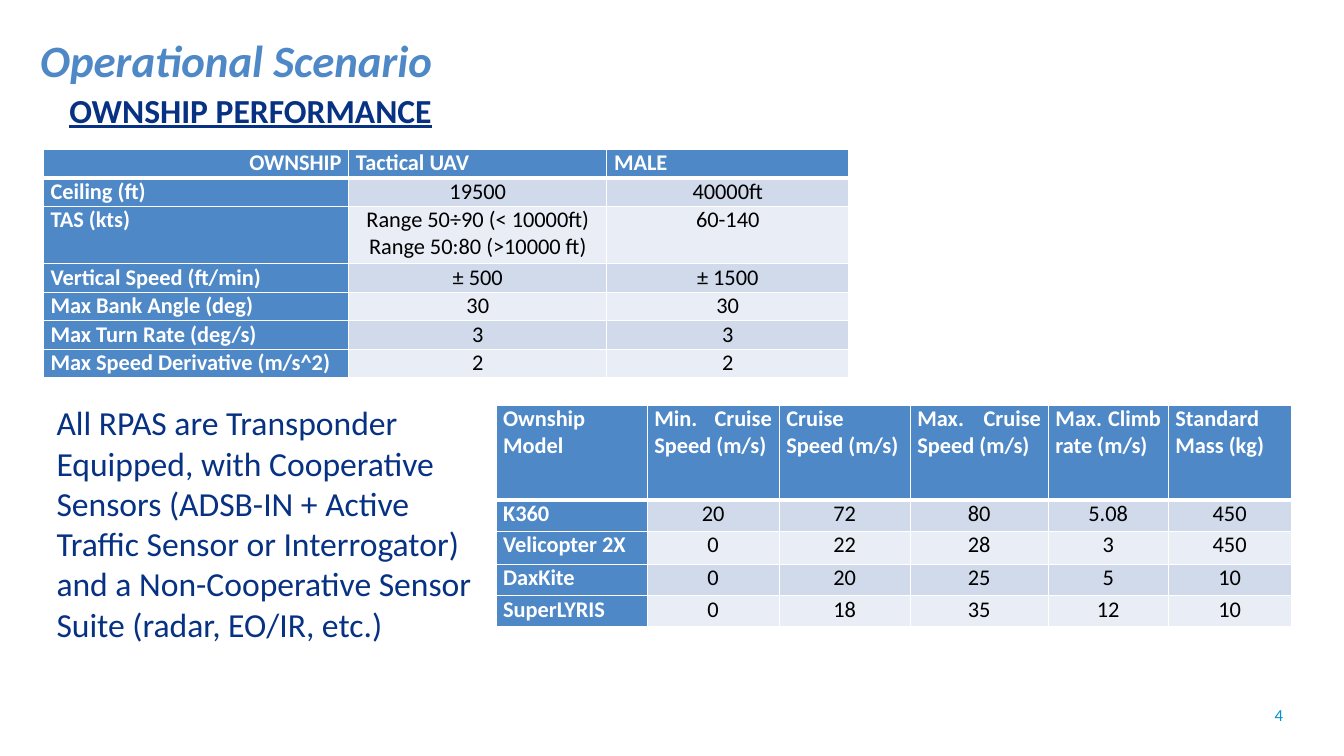
from dataclasses import dataclass, field

from lxml.etree import SubElement
from pptx import Presentation
from pptx.dml.color import RGBColor
from pptx.enum.text import MSO_AUTO_SIZE as AutoSize, PP_ALIGN as Align
from pptx.oxml.ns import qn
from pptx.util import Emu, Pt

# Grid of 160 columns by 90 rows of square units, twelve to the inch
COLUMNS, ROWS, UNIT = 160, 90, 76200
FONT = "Calibri"
WHITE, BLACK, NAVY, CYAN = "FFFFFF", "000000", "073182", "0093D1"
BLUE, BAND_DARK, BAND_LIGHT = "4E88C7", "D0DAEB", "E9EDF5"


@dataclass
class Caption:
    text: str
    box: tuple[float, float, float, float]
    color: str
    style: dict = field(default_factory=dict)
    align: Align = Align.LEFT
    padded: bool = True
    wrap: bool = True
    indent: float = 0


@dataclass
class Grid:
    left: float
    top: float
    widths: list[float]
    heights: list[float]
    rows: list[list[str]]
    corner_align: Align = Align.JUSTIFY


def units(amount: float) -> Emu:
    return Emu(round(amount * UNIT))


def rgb(color: str) -> RGBColor:
    return RGBColor.from_string(color)


def set_font(paragraph, color: str, style: dict) -> None:
    for run in paragraph.runs:
        for name, value in {"name": FONT, **style}.items():
            setattr(run.font, name, value)
        run.font.color.rgb = rgb(color)


def draw_caption(slide, caption: Caption) -> None:
    frame = slide.shapes.add_textbox(*map(units, caption.box)).text_frame
    frame.word_wrap = caption.wrap
    if not caption.wrap:
        frame.auto_size = AutoSize.SHAPE_TO_FIT_TEXT
    if not caption.padded:
        for side in ("left", "top", "right", "bottom"):
            setattr(frame, f"margin_{side}", 0)
    frame.text = caption.text
    paragraph = frame.paragraphs[0]
    paragraph.alignment = caption.align
    if caption.indent:
        properties = paragraph._p.get_or_add_pPr()
        properties.set("marL", str(units(caption.indent)))
        properties.set("indent", "0")
    set_font(paragraph, caption.color, caption.style)


def draw_borders(cell, row: int) -> None:
    """White hairlines, with a heavier rule under the header row."""
    widths = {"L": 1, "R": 1, "T": 3 if row == 1 else 1, "B": 3 if row == 0 else 1}
    properties = cell._tc.get_or_add_tcPr()
    for side, width in widths.items():
        line = SubElement(properties, qn(f"a:ln{side}"), w=str(Pt(width)))
        SubElement(SubElement(line, qn("a:solidFill")), qn("a:srgbClr"), val=WHITE)


def draw_cell(cell, text: str, row: int, column: int, corner_align: Align) -> None:
    heading = row == 0 or column == 0
    align = Align.JUSTIFY if heading else Align.CENTER
    if row == column == 0:
        align = corner_align
    margins = {"margin_left": units(0.86), "margin_right": units(0.86),
               "margin_top": 0, "margin_bottom": 0}
    for name, value in margins.items():
        setattr(cell, name, value)
    draw_borders(cell, row)
    cell.fill.solid()
    cell.fill.fore_color.rgb = rgb(BLUE if heading else BAND_DARK if row % 2 else BAND_LIGHT)
    cell.text = text
    for paragraph in cell.text_frame.paragraphs:
        paragraph.alignment = align
        set_font(paragraph, WHITE if heading else BLACK, {"size": Pt(16), "bold": heading})
    cell.text_frame.paragraphs[-1].space_after = Pt(10)


def draw_grid(slide, grid: Grid) -> None:
    box = (grid.left, grid.top, sum(grid.widths), sum(grid.heights))
    table = slide.shapes.add_table(
        len(grid.rows), len(grid.widths), *map(units, box)).table
    table.horz_banding = False
    for column, width in zip(table.columns, grid.widths):
        column.width = units(width)
    for row, height in zip(table.rows, grid.heights):
        row.height = units(height)
    for r, texts in enumerate(grid.rows):
        for c, text in enumerate(texts):
            draw_cell(table.cell(r, c), text, r, c, grid.corner_align)


PAGE_NUMBER = Caption("4", (116.76, 83.88, 36, 3.12), CYAN, {"size": Pt(12)},
                      Align.RIGHT, padded=False)
SENSORS = Caption(
    "All RPAS are Transponder Equipped, with Cooperative Sensors (ADSB-IN + Active "
    "Traffic Sensor or Interrogator) and a Non-Cooperative Sensor Suite (radar, EO/IR, etc.)",
    (1.8, 47.28, 57.24, 34.44), NAVY, {"size": Pt(24)}, indent=3.75)
TITLE = Caption("Operational Scenario", (3.6, 3.36, 107.4, 8.28), BLUE,
                {"size": Pt(32), "bold": True, "italic": True})
SUBTITLE = Caption("OWNSHIP PERFORMANCE", (7.08, 10.08, 45.96, 6), NAVY,
                   {"size": Pt(24), "bold": True, "underline": True},
                   Align.JUSTIFY, wrap=False)

MODELS = Grid(
    59.04, 48.24,
    [18, 15.72, 15.6, 16.44, 14.28, 14.64],
    [11.28, 3.72, 3.96, 3.72, 3.72],
    [["Ownship Model", "Min. Cruise Speed (m/s)", "Cruise Speed (m/s)",
      "Max. Cruise Speed (m/s)", "Max. Climb rate (m/s)", "Standard Mass (kg)"],
     ["K360", "20", "72", "80", "5.08", "450"],
     ["Velicopter 2X", "0", "22", "28", "3", "450"],
     ["DaxKite", "0", "20", "25", "5", "10"],
     ["SuperLYRIS", "0", "18", "35", "12", "10"]])
PERFORMANCE = Grid(
    5.16, 17.76,
    [36.36, 30.72, 28.8],
    [3.4, 3.4, 6.84] + [3.4] * 4,
    [["OWNSHIP", "Tactical UAV", "MALE"],
     ["Ceiling (ft)", "19500", "40000ft"],
     ["TAS (kts)", "Range 50÷90 (< 10000ft)\nRange 50:80 (>10000 ft)", "60-140"],
     ["Vertical Speed (ft/min)", "± 500", "± 1500"],
     ["Max Bank Angle (deg)", "30", "30"],
     ["Max Turn Rate (deg/s)", "3", "3"],
     ["Max Speed Derivative (m/s^2)", "2", "2"]],
    Align.RIGHT)


def main() -> None:
    deck = Presentation()
    deck.slide_width, deck.slide_height = units(COLUMNS), units(ROWS)
    slide = deck.slides.add_slide(deck.slide_layouts[6])

    # Page number, then the two tables
    draw_caption(slide, PAGE_NUMBER)
    for grid in (MODELS, PERFORMANCE):
        draw_grid(slide, grid)

    # Sensor statement and headings
    for caption in (SENSORS, TITLE, SUBTITLE):
        draw_caption(slide, caption)

    deck.save("out.pptx")


if __name__ == "__main__":
    main()
